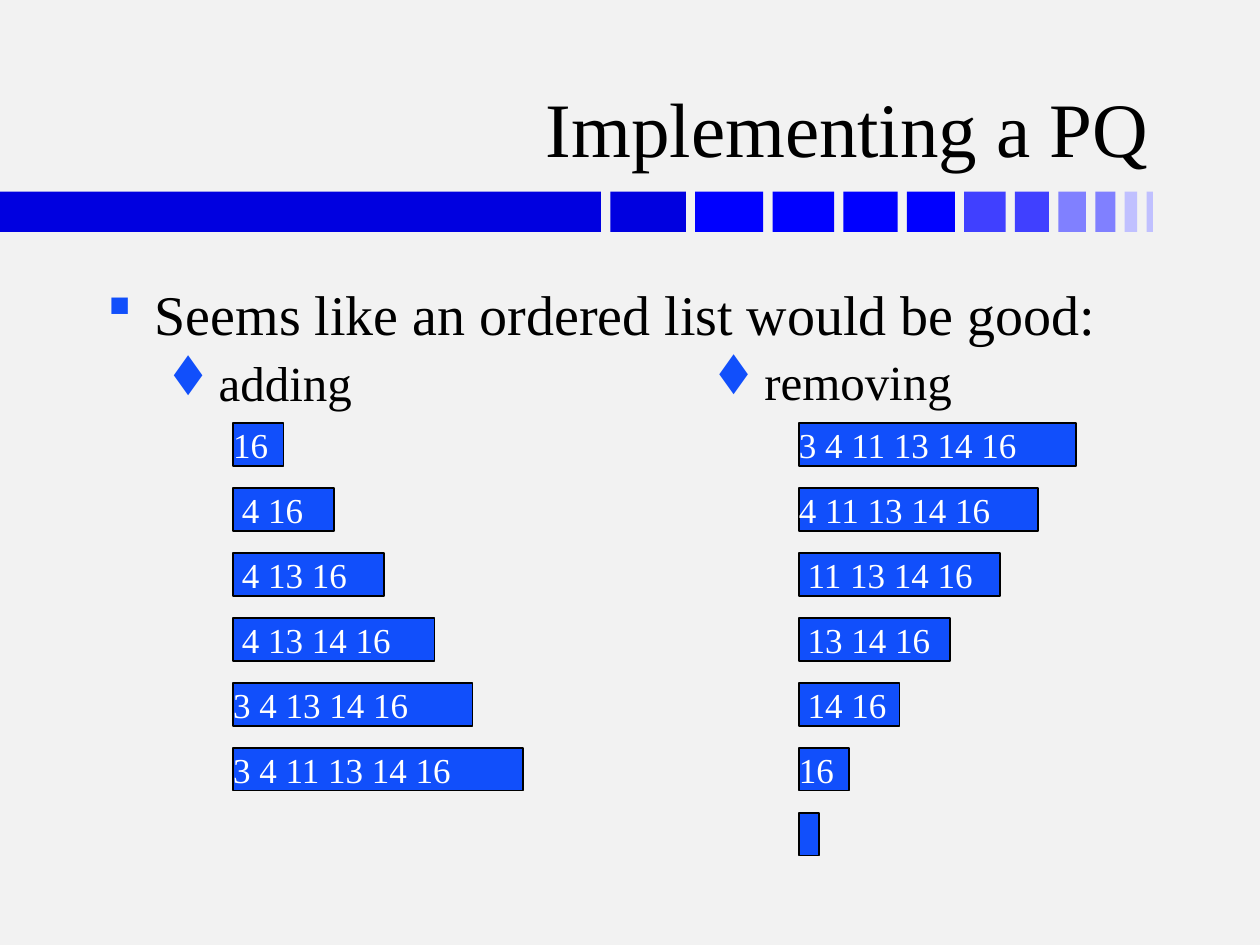
from dataclasses import dataclass

from lxml import etree
from pptx import Presentation
from pptx.dml.color import RGBColor
from pptx.enum.shapes import MSO_SHAPE
from pptx.enum.text import MSO_ANCHOR, PP_ALIGN
from pptx.oxml.ns import qn
from pptx.util import Inches, Pt

RECTANGLE = MSO_SHAPE.RECTANGLE
LEFT, RIGHT = PP_ALIGN.LEFT, PP_ALIGN.RIGHT
TOP, MIDDLE, BOTTOM = MSO_ANCHOR.TOP, MSO_ANCHOR.MIDDLE, MSO_ANCHOR.BOTTOM


@dataclass(frozen=True)
class Theme:
    font: str = "Times New Roman"
    bullet_font: str = "Wingdings"
    background: str = "F2F2F2"
    ink: str = "000000"
    accent: str = "114FFB"
    light: str = "FFFFFF"
    title: int = 44
    heading: int = 32
    item: int = 28
    cell: int = 20


theme = Theme()


def write(paragraph, text, *, size, color=theme.ink, align=LEFT, before=0,
          bullet=None, margin=0, hanging=0):
    """Write one formatted paragraph, with a coloured bullet if given."""
    paragraph.alignment = align
    paragraph.space_before = Pt(before)
    if bullet:
        properties = paragraph._p.get_or_add_pPr()
        properties.set("marL", str(Inches(margin)))
        properties.set("indent", str(-Inches(hanging)))
        bullet_color = etree.SubElement(properties, qn("a:buClr"))
        etree.SubElement(bullet_color, qn("a:srgbClr"), val=theme.accent)
        etree.SubElement(properties, qn("a:buFont"),
                         typeface=theme.bullet_font, charset="2")
        etree.SubElement(properties, qn("a:buChar"), char=bullet)
    span = paragraph.add_run()
    span.text = text
    span.font.name = theme.font
    span.font.size = Pt(size)
    span.font.color.rgb = RGBColor.from_string(color)


def add_bar(left, top, width, height, color):
    """Add a filled rectangle without outline or shadow."""
    bar = page.shapes.add_shape(RECTANGLE, Inches(left), Inches(top),
                                Inches(width), Inches(height))
    bar.shadow.inherit = False
    bar.fill.solid()
    bar.fill.fore_color.rgb = RGBColor.from_string(color)
    bar.line.fill.background()
    return bar


deck = Presentation()
deck.slide_width, deck.slide_height = Inches(10), Inches(7.5)
page = deck.slides.add_slide(deck.slide_layouts[6])
page.background.fill.solid()
page.background.fill.fore_color.rgb = RGBColor.from_string(theme.background)

# Fading band: equal gaps between ever narrower segments
segments = [
    (4.77, "0000E0"), (0.6, "0000E0"), (0.54, "0000FF"), (0.49, "0000FF"),
    (0.43, "0000FF"), (0.38, "0000FF"), (0.33, "4040FF"), (0.27, "4040FF"),
    (0.22, "8080FF"), (0.16, "8080FF"), (0.1, "C0C0FF"), (0.05, "C0C0FF"),
]
band_end = 9.15
gap = (band_end - sum(width for width, _ in segments)) / (len(segments) - 1)
left = 0
for width, color in segments:
    add_bar(left, 1.52, width, 0.32, color)
    left += width + gap

# Title and bulleted text; in the bullet font, § is a square and t a diamond
square = dict(size=theme.heading, bullet="§", margin=0.38, hanging=0.38)
diamond = dict(size=theme.item, bullet="t", margin=0.81, hanging=0.31)
text_boxes = [
    ((0.74, 0.19, 8.48, 1.23), BOTTOM,
     [("Implementing a PQ", dict(size=theme.title, align=RIGHT))]),
    ((0.75, 2.17, 8.5, 4.5), TOP,
     [("Seems like an ordered list would be good:", square),
      ("adding", dict(diamond, before=3))]),
    ((5.08, 2.74, 4.17, 3.93), TOP, [("removing", diamond)]),
]
for place, anchor, lines in text_boxes:
    box = page.shapes.add_textbox(*map(Inches, place))
    frame = box.text_frame
    frame.word_wrap = True
    frame.vertical_anchor = anchor
    for index, (text, style) in enumerate(lines):
        paragraph = frame.add_paragraph() if index else frame.paragraphs[0]
        write(paragraph, text, **style)

# Queue contents after each step
queues = [
    (1.85, [("16", 0.4), (" 4 16", 0.8), (" 4 13 16", 1.2),
            (" 4 13 14 16", 1.6), ("3 4 13 14 16", 1.9),
            ("3 4 11 13 14 16", 2.3)]),
    (6.34, [("3 4 11 13 14 16", 2.2), ("4 11 13 14 16", 1.9),
            (" 11 13 14 16", 1.6), (" 13 14 16", 1.2), (" 14 16", 0.8),
            ("16", 0.4), ("", 0.16)]),
]
first_top, last_top, last_row = 3.36, 6.45, 6
step = (last_top - first_top) / last_row
for left, states in queues:
    for row, (text, width) in enumerate(states):
        queue = add_bar(left, first_top + row * step, width, 0.34, theme.accent)
        queue.line.color.rgb = RGBColor.from_string(theme.ink)
        queue.line.width = Pt(1)
        if text:
            frame = queue.text_frame
            frame.margin_left = frame.margin_right = 0
            frame.margin_top = frame.margin_bottom = 0
            frame.vertical_anchor = MIDDLE
            write(frame.paragraphs[0], text, size=theme.cell, color=theme.light)

deck.save("out.pptx")
